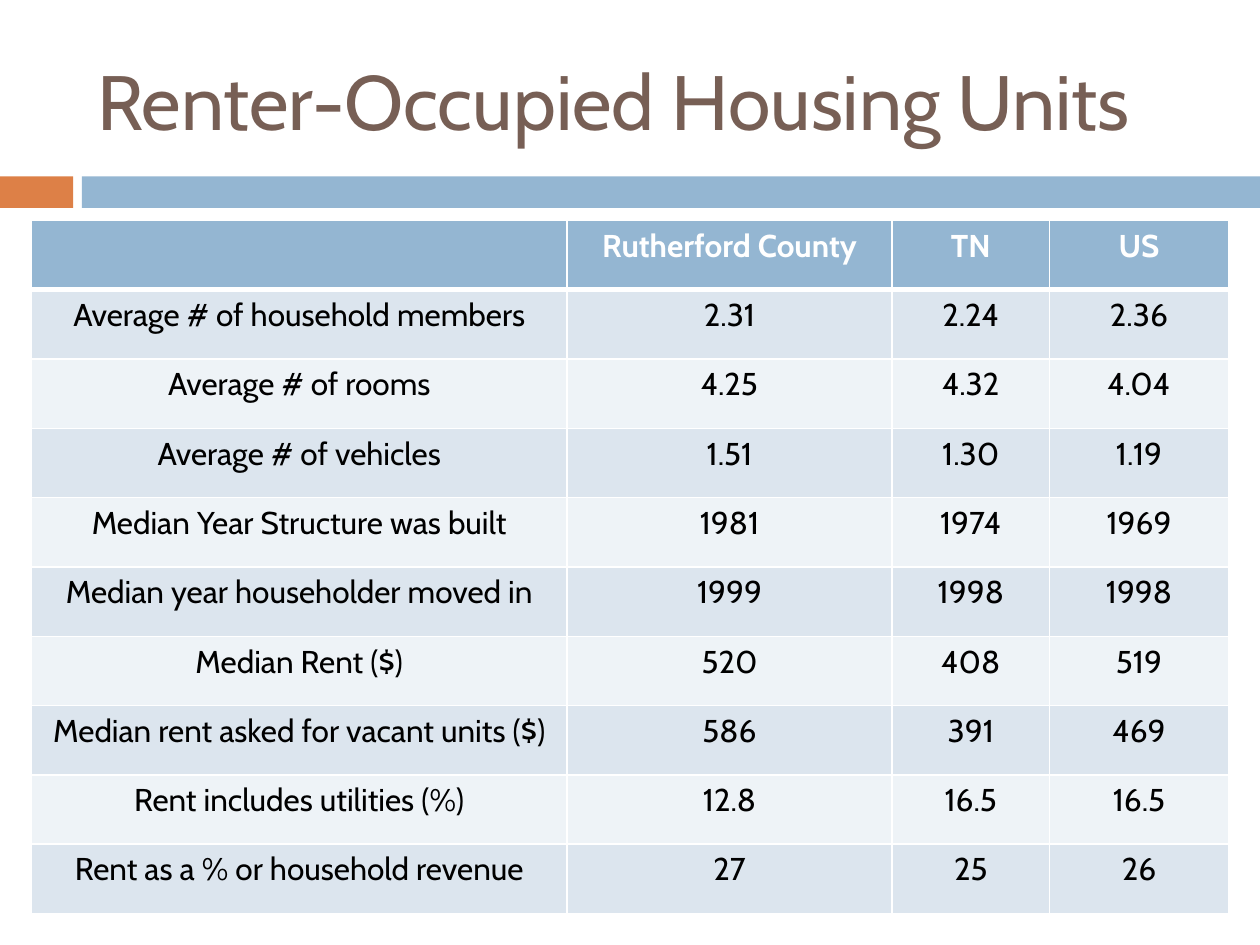
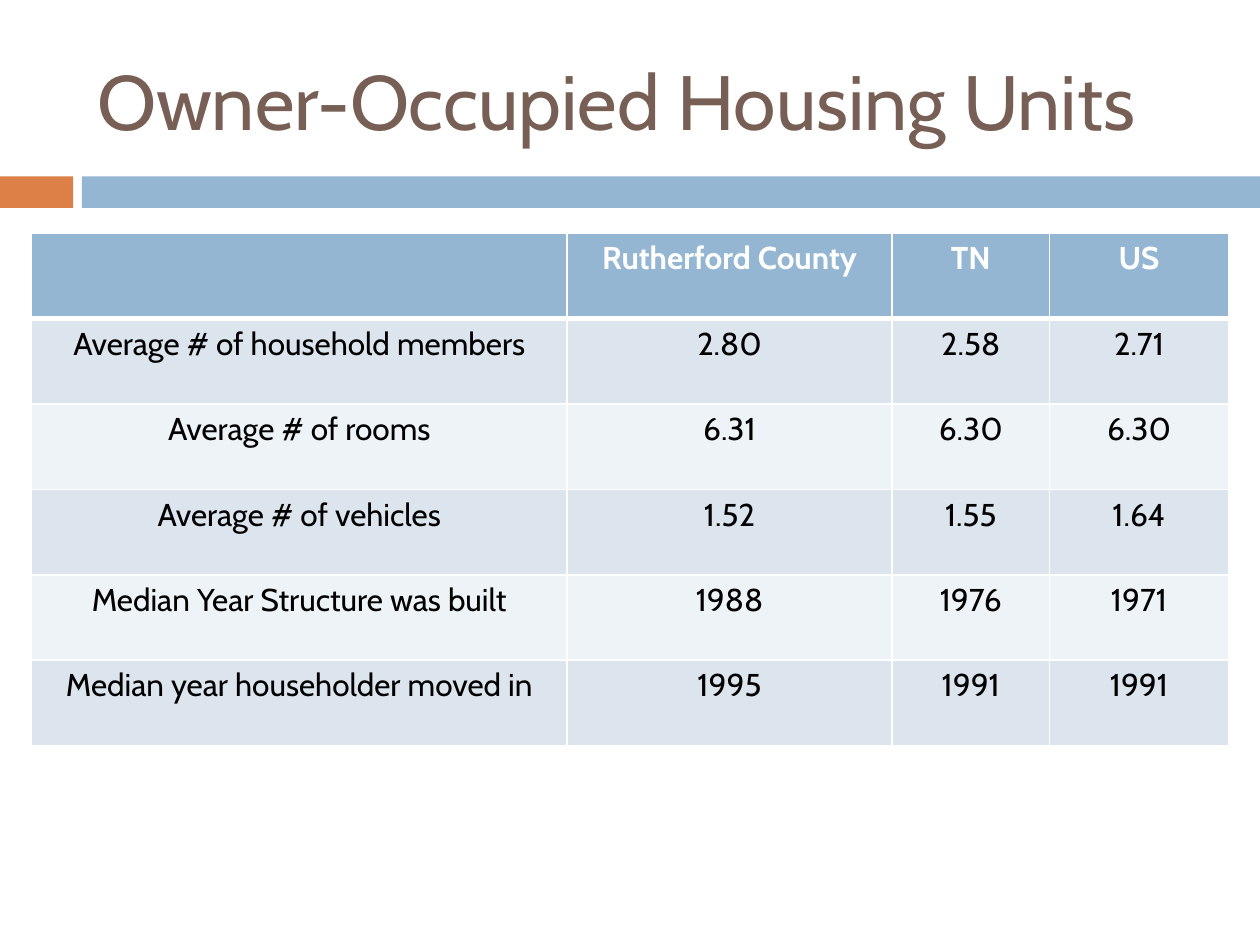
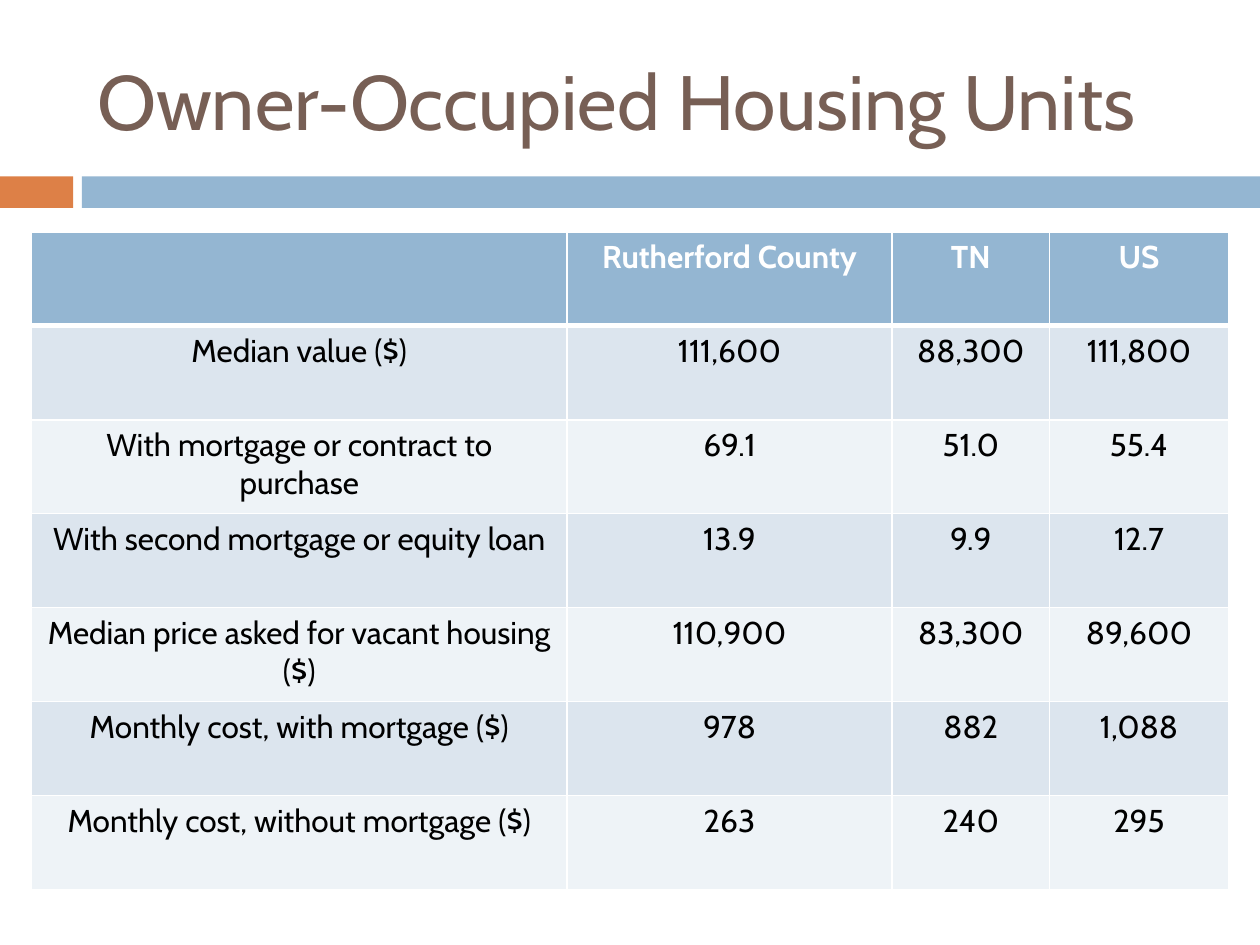
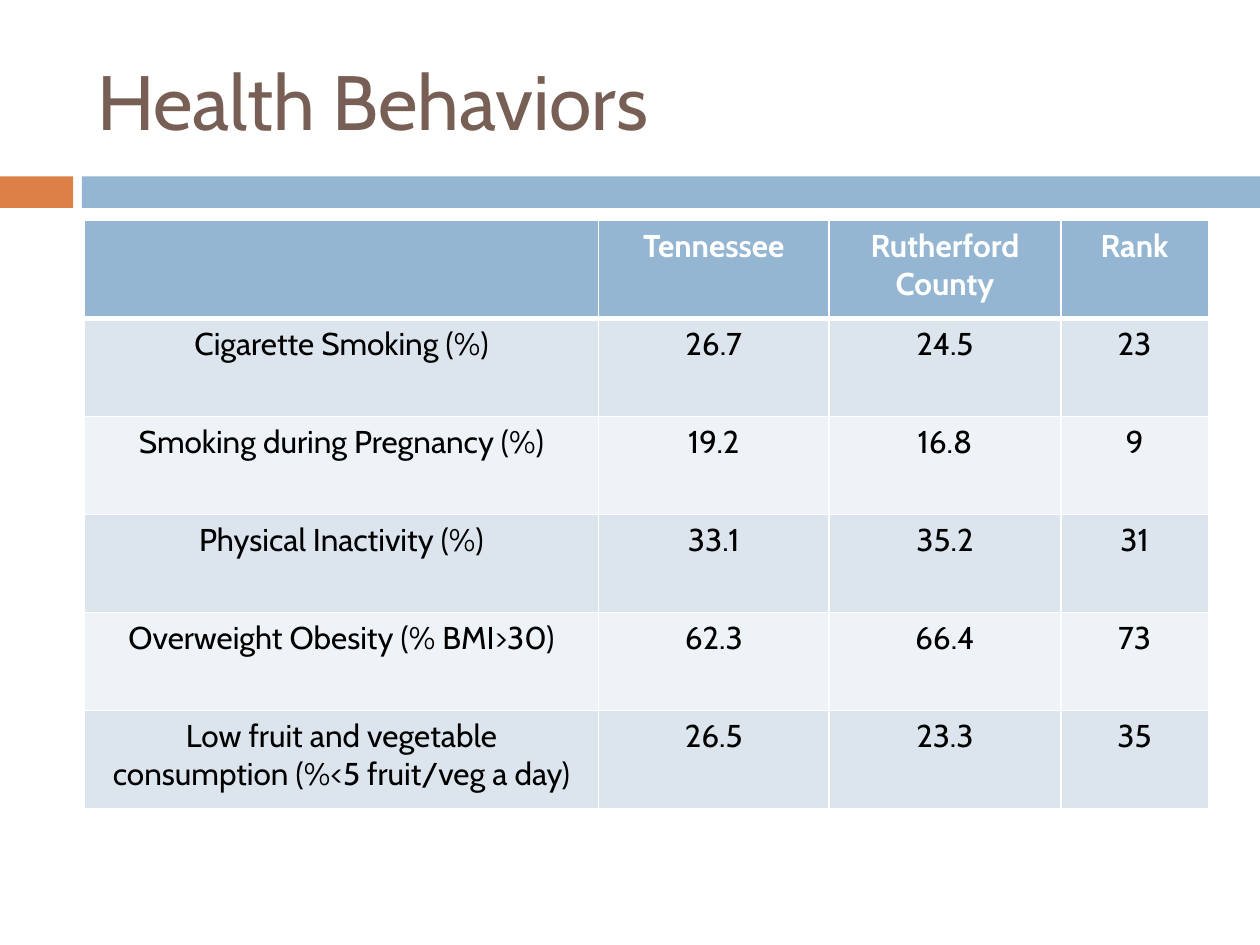
from pptx import Presentation
from pptx.dml.color import RGBColor
from pptx.enum.shapes import MSO_SHAPE as SHAPE
from pptx.enum.text import MSO_ANCHOR as ANCHOR, MSO_AUTO_SIZE as AUTO, PP_ALIGN as ALIGN
from pptx.oxml import parse_xml
from pptx.oxml.ns import nsdecls
from pptx.util import Inches, Pt

COLORS = {
    "title": "775F55", "accent": "DD8047", "band": "94B6D2", "odd": "DCE5EE",
    "even": "EEF3F7", "text": "000000", "white": "FFFFFF",
}
FONT = "Cabin"
LEFT, WIDTH = 0.67, 8.92
BAND_TOP, BAND_HEIGHT = 1.4, 0.25
BANDS = ((0, 0.58, "accent"), (0.65, 9.35, "band"))
WIDE = {"left": 0.25, "columns": (4.25, 2.58, 1.25, 1.42)}
INDENTED = {"left": LEFT, "columns": (4.08, 1.83, 1.84, 1.17)}
REGIONS = ("", "Rutherford County", "TN", "US")

RENTERS = [
    REGIONS,
    ("Average # of household members", "2.31", "2.24", "2.36"),
    ("Average # of rooms", "4.25", "4.32", "4.04"),
    ("Average # of vehicles", "1.51", "1.30", "1.19"),
    ("Median Year Structure was built", "1981", "1974", "1969"),
    ("Median year householder moved in", "1999", "1998", "1998"),
    ("Median Rent ($)", "520", "408", "519"),
    ("Median rent asked for vacant units ($)", "586", "391", "469"),
    ("Rent includes utilities (%)", "12.8", "16.5", "16.5"),
    ("Rent as a % or household revenue", "27", "25", "26"),
]
OWNERS = [
    REGIONS,
    ("Average # of household members", "2.80", "2.58", "2.71"),
    ("Average # of rooms", "6.31", "6.30", "6.30"),
    ("Average # of vehicles", "1.52", "1.55", "1.64"),
    ("Median Year Structure was built", "1988", "1976", "1971"),
    ("Median year householder moved in", "1995", "1991", "1991"),
]
OWNER_COSTS = [
    REGIONS,
    ("Median value ($)", "111,600", "88,300", "111,800"),
    ("With mortgage or contract to purchase", "69.1", "51.0", "55.4"),
    ("With second mortgage or equity loan", "13.9", "9.9", "12.7"),
    ("Median price asked for vacant housing ($)", "110,900", "83,300", "89,600"),
    ("Monthly cost, with mortgage ($)", "978", "882", "1,088"),
    ("Monthly cost, without mortgage ($)", "263", "240", "295"),
]
HEALTH = [
    ("", "Tennessee", "Rutherford County", "Rank"),
    ("Cigarette Smoking (%)", "26.7", "24.5", "23"),
    ("Smoking during Pregnancy (%)", "19.2", "16.8", "9"),
    ("Physical Inactivity (%)", "33.1", "35.2", "31"),
    ("Overweight Obesity (% BMI>30)", "62.3", "66.4", "73"),
    ("Low fruit and vegetable consumption (%<5 fruit/veg a day)", "26.5", "23.3", "35"),
]


def rgb(name):
    """Return a named palette colour."""
    return RGBColor.from_string(COLORS[name])


def set_font(p, size, color, bold=False):
    """Format a whole paragraph."""
    p.font.name, p.font.size, p.font.bold = FONT, Pt(size), bold
    p.font.color.rgb = rgb(color)


def add_bands(slide):
    """Draw the two bands below the title."""
    for left, width, color in BANDS:
        sp = slide.shapes.add_shape(SHAPE.RECTANGLE, Inches(left), Inches(BAND_TOP),
                                    Inches(width), Inches(BAND_HEIGHT))
        sp.shadow.inherit = False
        sp.fill.solid()
        sp.fill.fore_color.rgb = rgb(color)
        sp.line.fill.background()


def place_layout_title(layout):
    """Set the title area once for every slide."""
    for ph in layout.placeholders:
        if ph.placeholder_format.idx == 0:
            ph.left, ph.top = Inches(LEFT), Inches(0.25)
            ph.width, ph.height = Inches(WIDTH), Inches(1.08)


def add_title(slide, text):
    """Fill and format the title placeholder."""
    tf = slide.shapes.title.text_frame
    tf.text = text
    tf.auto_size = AUTO.NONE
    tf.vertical_anchor = ANCHOR.MIDDLE
    p = tf.paragraphs[0]
    p.alignment = ALIGN.LEFT
    set_font(p, 44, "title")


def add_borders(cell, row):
    """Draw white cell edges, with a heavy rule under the header."""
    points = {"L": 1, "R": 1, "T": 3 if row == 1 else 1, "B": 3 if row == 0 else 1}
    for side, width in points.items():
        cell._tc.get_or_add_tcPr().append(parse_xml(
            f'<a:ln{side} {nsdecls("a")} w="{Pt(width)}"><a:solidFill>'
            f'<a:srgbClr val="{COLORS["white"]}"/></a:solidFill></a:ln{side}>'))


def format_cell(cell, text, row):
    """Write one cell in header or banded style."""
    header = row == 0
    add_borders(cell, row)
    cell.fill.solid()
    cell.fill.fore_color.rgb = rgb("band" if header else "odd" if row % 2 else "even")
    cell.text = text
    p = cell.text_frame.paragraphs[0]
    p.alignment = ALIGN.CENTER
    set_font(p, 18, "white" if header else "text", bold=header)


def add_data_table(slide, data, top, height, left, columns):
    """Add a table with equal rows and given column widths."""
    table = slide.shapes.add_table(len(data), len(columns), Inches(left), Inches(top),
                                   Inches(sum(columns)), Inches(height)).table
    for column, width in zip(table.columns, columns):
        column.width = Inches(width)
    for i, values in enumerate(data):
        table.rows[i].height = Inches(height / len(data))
        for j, text in enumerate(values):
            format_cell(table.cell(i, j), text, i)


def main():
    """Build the four table slides."""
    prs = Presentation()
    prs.slide_width, prs.slide_height = Inches(10), Inches(7.5)
    layout = prs.slide_layouts[5]
    place_layout_title(layout)
    pages = (
        ("Renter-Occupied Housing Units", RENTERS, 1.75, 5.5, WIDE),
        ("Owner-Occupied Housing Units", OWNERS, 1.85, 4.07, WIDE),
        ("Owner-Occupied Housing Units", OWNER_COSTS, 1.84, 5.22, WIDE),
        ("Health Behaviors", HEALTH, 1.75, 4.67, INDENTED),
    )
    for title, data, top, height, grid in pages:
        slide = prs.slides.add_slide(layout)
        add_bands(slide)
        add_title(slide, title)
        add_data_table(slide, data, top, height, **grid)
    prs.save("out.pptx")


if __name__ == "__main__":
    main()
